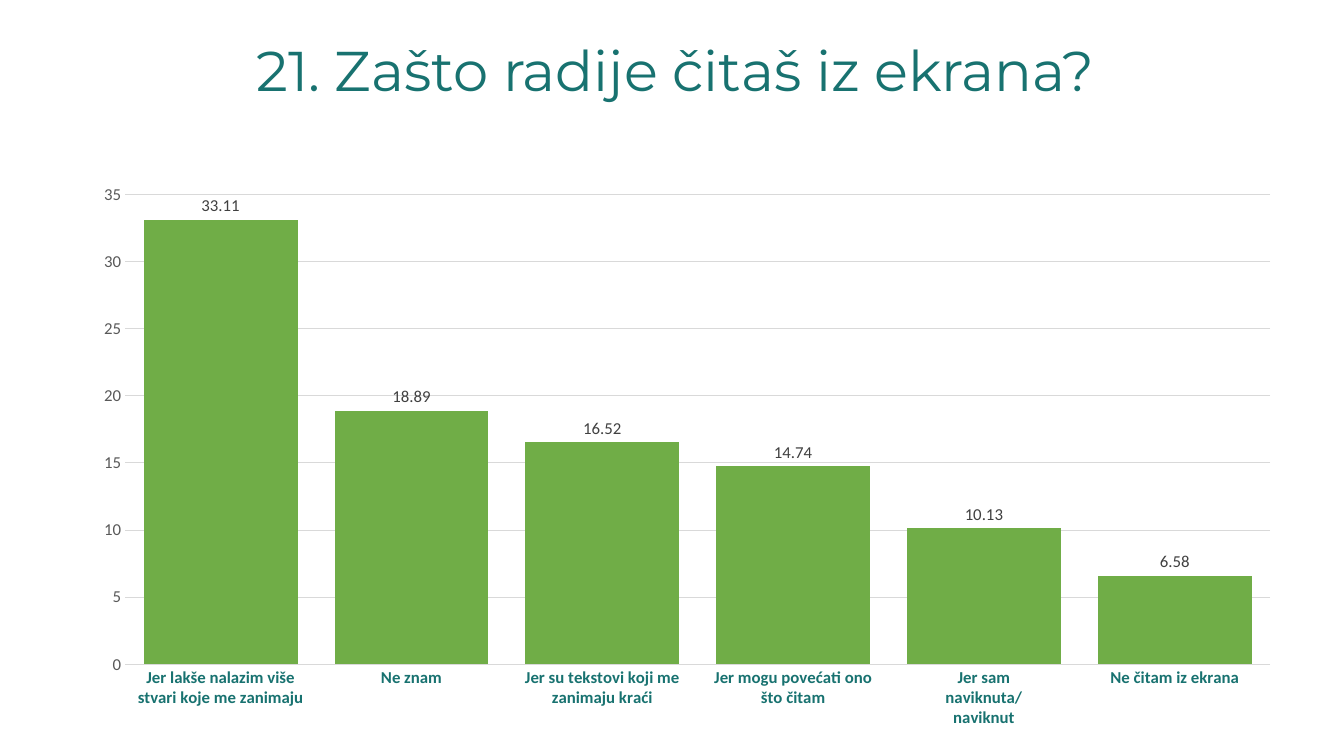
"""Build a slide with a column chart of reasons for reading on a screen."""
from lxml.etree import SubElement
from pptx import Presentation
from pptx.chart.data import CategoryChartData
from pptx.dml.color import RGBColor as RGB
from pptx.enum.chart import XL_CHART_TYPE as KIND, XL_LABEL_POSITION as SPOT, XL_TICK_MARK as TICK
from pptx.enum.text import MSO_ANCHOR as ANCHOR, PP_ALIGN as ALIGN
from pptx.oxml.ns import qn
from pptx.util import Inches, Pt

HUES = {"teal": "187270", "green": "70AD47", "grid": "D9D9D9", "axis": "595959", "label": "404040"}
REASONS = {
    "Jer lakše nalazim više stvari koje me zanimaju": 33.11,
    "Ne znam": 18.89,
    "Jer su tekstovi koji me zanimaju kraći": 16.52,
    "Jer mogu povećati ono što čitam": 14.74,
    "Jer sam naviknuta/naviknut": 10.13,
    "Ne čitam iz ekrana": 6.58,
}
PLOT = {"x": 0.061, "y": 0.154, "w": 0.921, "h": 0.757}


def style(font, size, hue, face="Calibri", bold=False):
    font.size, font.name, font.bold = Pt(size), face, bold
    font.color.rgb = RGB.from_string(HUES[hue])


def rule(line):
    line.width = Pt(0.75)
    line.color.rgb = RGB.from_string(HUES["grid"])


deck = Presentation()
deck.slide_width, deck.slide_height = Inches(13.33), Inches(7.5)
slide = deck.slides.add_slide(deck.slide_layouts[5])

title = slide.shapes.title
title.left, title.top, title.width, title.height = map(Inches, (0.95, 0, 11.5, 1.45))
title.text_frame.vertical_anchor = ANCHOR.MIDDLE
para = title.text_frame.paragraphs[0]
para.alignment, para.line_spacing = ALIGN.CENTER, 0.9
run = para.add_run()
run.text = "21. Zašto radije čitaš iz ekrana?"
style(run.font, 40, "teal", "Montserrat")

data = CategoryChartData(number_format="0.00")
data.categories = list(REASONS)
data.add_series("Udio", list(REASONS.values()))
box = map(Inches, (0.49, 0.98, 12.33, 6.2))
chart = slide.shapes.add_chart(KIND.COLUMN_CLUSTERED, *box, data).chart
chart.has_title = chart.has_legend = False
chart.font.name, chart.font.size = "Calibri", Pt(10)

area = chart.plots[0]
area.gap_width, area.overlap, area.vary_by_categories = 24, 71, False
bars = area.series[0]
bars.format.fill.solid()
bars.format.fill.fore_color.rgb = RGB.from_string(HUES["green"])
area.has_data_labels = True
tags = area.data_labels
tags.show_value, tags.position = True, SPOT.OUTSIDE_END
tags.number_format, tags.number_format_is_linked = "0.00", False
style(tags.font, 12, "label")

cats, vals = chart.category_axis, chart.value_axis
cats.major_tick_mark = vals.major_tick_mark = TICK.NONE
style(cats.tick_labels.font, 12, "teal", bold=True)
rule(cats.format.line)
style(vals.tick_labels.font, 12, "axis")
vals.tick_labels.number_format, vals.tick_labels.number_format_is_linked = "0", False
vals.minimum_scale, vals.maximum_scale, vals.major_unit = 0, 35, 5
vals.format.line.fill.background()
rule(vals.major_gridlines.format.line)

zone = chart.element.find(".//" + qn("c:plotArea"))
for old in zone.findall(qn("c:layout")):
    zone.remove(old)
frame = SubElement(zone, qn("c:layout"))
zone.insert(0, frame)
spot = SubElement(frame, qn("c:manualLayout"))
modes = {"layoutTarget": "inner", "xMode": "edge", "yMode": "edge"}
for key, val in {**modes, **PLOT}.items():
    SubElement(spot, qn("c:" + key)).set("val", str(val))

deck.save("out.pptx")
